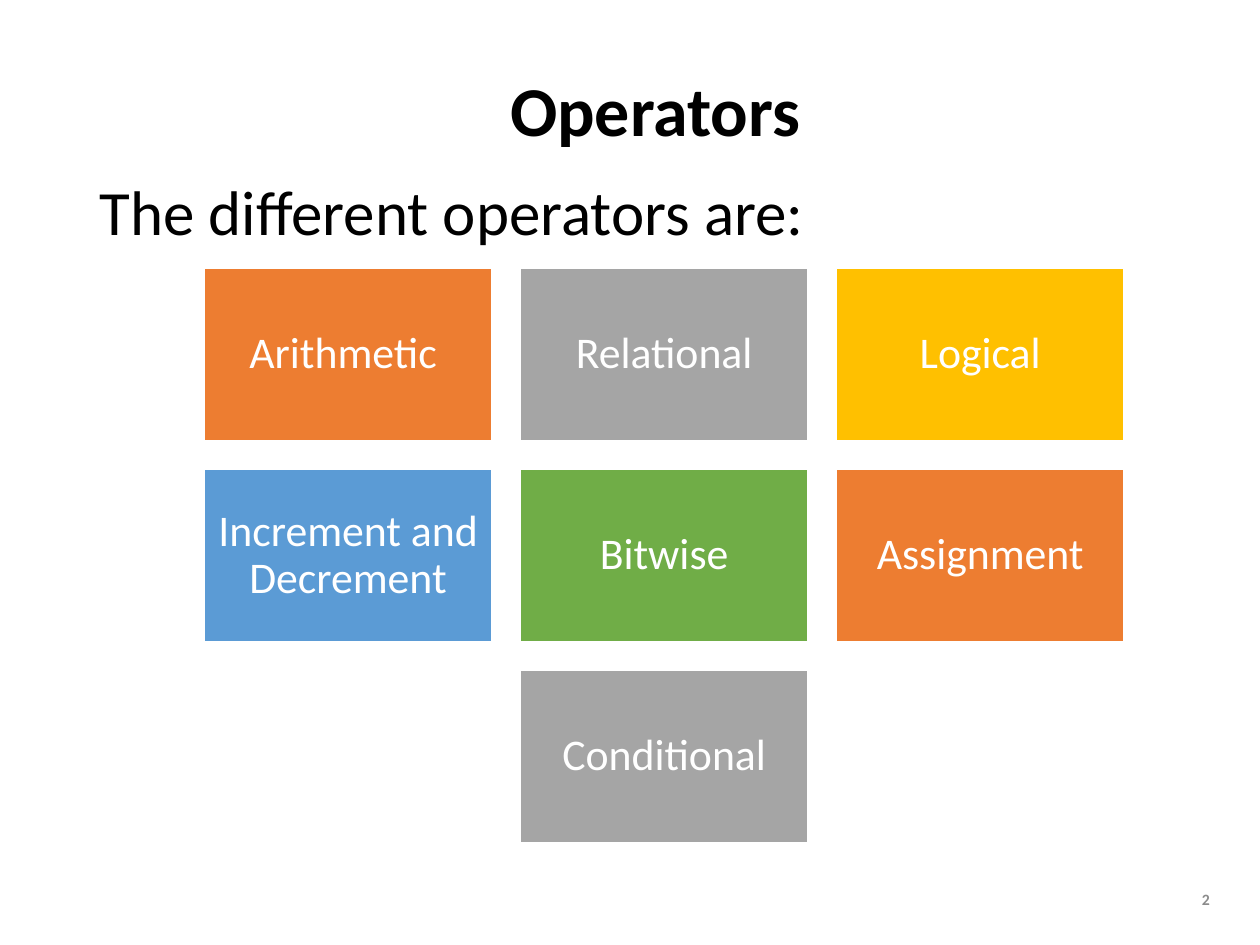
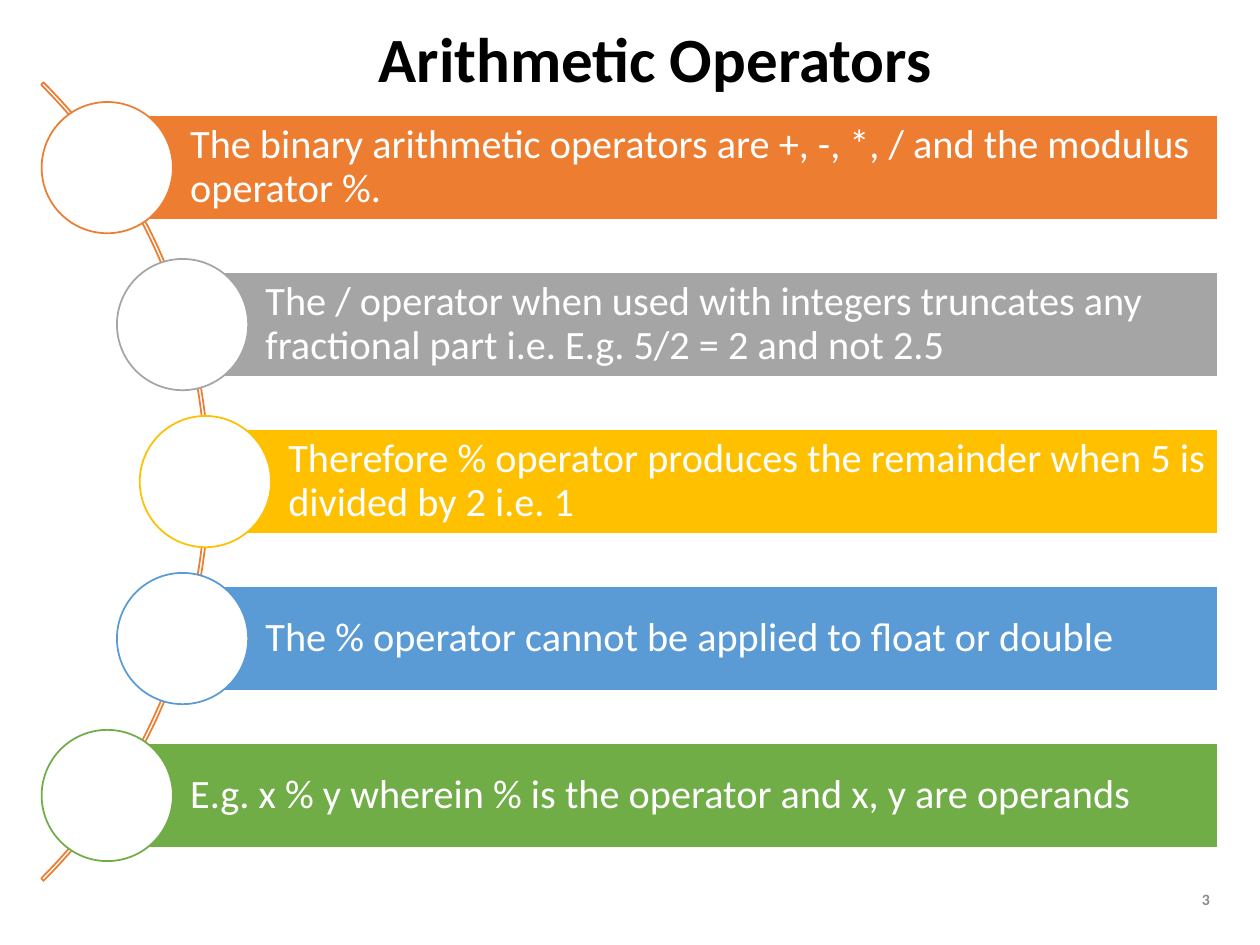
from dataclasses import dataclass
from itertools import cycle
from math import sqrt

from pptx import Presentation
from pptx.dml.color import RGBColor
from pptx.enum import shapes, text
from pptx.util import Pt

KIND = shapes.MSO_SHAPE
ALIGN = text.PP_ALIGN
ANCHOR = text.MSO_ANCHOR


@dataclass(frozen=True)
class Theme:
    font: str = "Calibri"
    black: str = "000000"
    white: str = "FFFFFF"
    grey: str = "8C8C8C"
    tints: tuple = ("ED7D31", "A5A5A5", "FFC000", "5B9BD5", "70AD47")
    lead: int = 36
    tile: int = 25
    bar: int = 23
    page: int = 9
    line: float = 1
    space: float = 0.9


THEME = Theme()


def rgb(code):
    return RGBColor.from_string(code)


def write(shape, words, size, color, align=ALIGN.LEFT, anchor=ANCHOR.MIDDLE,
          bold=False, pads=(7.2, 3.6, 7.2, 3.6)):
    """Fill a shape with one styled paragraph; pads run left, top, right, bottom."""
    frame = shape.text_frame
    frame.text = words
    frame.word_wrap = True
    frame.auto_size = text.MSO_AUTO_SIZE.NONE
    frame.vertical_anchor = anchor
    frame.margin_left, frame.margin_top, frame.margin_right, frame.margin_bottom = map(Pt, pads)
    para = frame.paragraphs[0]
    para.alignment = align
    para.line_spacing = THEME.space
    para.space_before = Pt(0)
    font = para.runs[0].font
    font.name, font.size, font.bold = THEME.font, Pt(size), bold
    font.color.rgb = rgb(color)


def draw(slide, kind, box, fill, line):
    shape = slide.shapes.add_shape(kind, *map(Pt, box))
    shape.shadow.inherit = False
    if fill:
        shape.fill.solid()
        shape.fill.fore_color.rgb = rgb(fill)
    else:
        shape.fill.background()
    shape.line.color.rgb = rgb(line)
    shape.line.width = Pt(THEME.line)
    return shape


def label(slide, box, words, size, color, **style):
    write(slide.shapes.add_textbox(*map(Pt, box)), words, size, color, **style)


# Title and page number shared by both slides
def start(prs, title, top, size, page):
    slide = prs.slides.add_slide(prs.slide_layouts[5])
    head = slide.shapes.title
    head.left, head.top, head.width, head.height = map(Pt, (49.7, top, 649.4, 49.7))
    write(head, title, size, THEME.black, align=ALIGN.CENTER, bold=True)
    label(slide, (670.3, 500.4, 28.1, 28.8), str(page), THEME.page, THEME.grey,
          align=ALIGN.RIGHT, bold=True)
    return slide


# Grid of tiles, with a short last row centred
def grid(slide, box, names, cols=3, gap=16.4):
    left, top, width, height = box
    rows = [names[i:i + cols] for i in range(0, len(names), cols)]
    wide = (width - gap * (cols - 1)) / cols
    high = (height - gap * (len(rows) - 1)) / len(rows)
    tints = cycle(THEME.tints)
    for r, row in enumerate(rows):
        inset = (cols - len(row)) * (wide + gap) / 2
        for c, name in enumerate(row):
            spot = (left + inset + c * (wide + gap), top + r * (high + gap), wide, high)
            tile = draw(slide, KIND.RECTANGLE, spot, next(tints), THEME.white)
            write(tile, name, THEME.tile, THEME.white, align=ALIGN.CENTER, pads=(7.2,) * 4)


# Bars led by dots that follow a curve
def curve(slide, box, lines, dot=75, bar=59.8, bend=315, ring=322.6):
    left, top, width, height = box
    step = (height - dot) / (len(lines) - 1)
    half = (height - dot) / 2
    mid = top + height / 2
    base = left + dot / 2 - sqrt(bend ** 2 - half ** 2)

    edge = base + bend + 2
    arc = draw(slide, KIND.BLOCK_ARC, (edge - 2 * ring, mid - ring, 2 * ring, 2 * ring),
               None, THEME.tints[0])
    for i, value in enumerate((189, 27, 0.003)):
        arc.adjustments[i] = value

    for i, (words, tint) in enumerate(zip(lines, THEME.tints)):
        y = mid - half + i * step
        x = base + sqrt(bend ** 2 - (y - mid) ** 2)
        strip = draw(slide, KIND.RECTANGLE, (x, y - bar / 2, left + width - x, bar),
                     tint, THEME.white)
        write(strip, words, THEME.bar, THEME.white, pads=(47.4, 4.3, 4.3, 4.3))
        draw(slide, KIND.OVAL, (x - dot / 2, y - dot / 2, dot, dot), THEME.white, tint)


def main():
    prs = Presentation()
    prs.slide_width, prs.slide_height = Pt(720), Pt(540)

    # Kinds of operators
    slide = start(prs, "Operators", 40.3, 40, 2)
    label(slide, (49.7, 100.1, 649.4, 60.5), "The different operators are:",
          THEME.lead, THEME.black, anchor=ANCHOR.TOP)
    grid(slide, (116.8, 153.4, 525.4, 328.3),
         ["Arithmetic ", "Relational", "Logical", "Increment and Decrement",
          "Bitwise", "Assignment", "Conditional"])

    # Rules of arithmetic
    slide = start(prs, "Arithmetic Operators", 10.8, 36, 3)
    curve(slide, (23.8, 58.3, 672.4, 433.8), [
        "The binary arithmetic operators are +, -, *, / and the modulus operator %.",
        "The / operator when used with integers truncates any fractional part "
        "i.e. E.g. 5/2 = 2 and not 2.5",
        "Therefore % operator produces the remainder when 5 is divided by 2 i.e. 1",
        "The % operator cannot be applied to float or double",
        "E.g. x % y wherein % is the operator and x, y are operands",
    ])
    prs.save("out.pptx")


if __name__ == "__main__":
    main()
